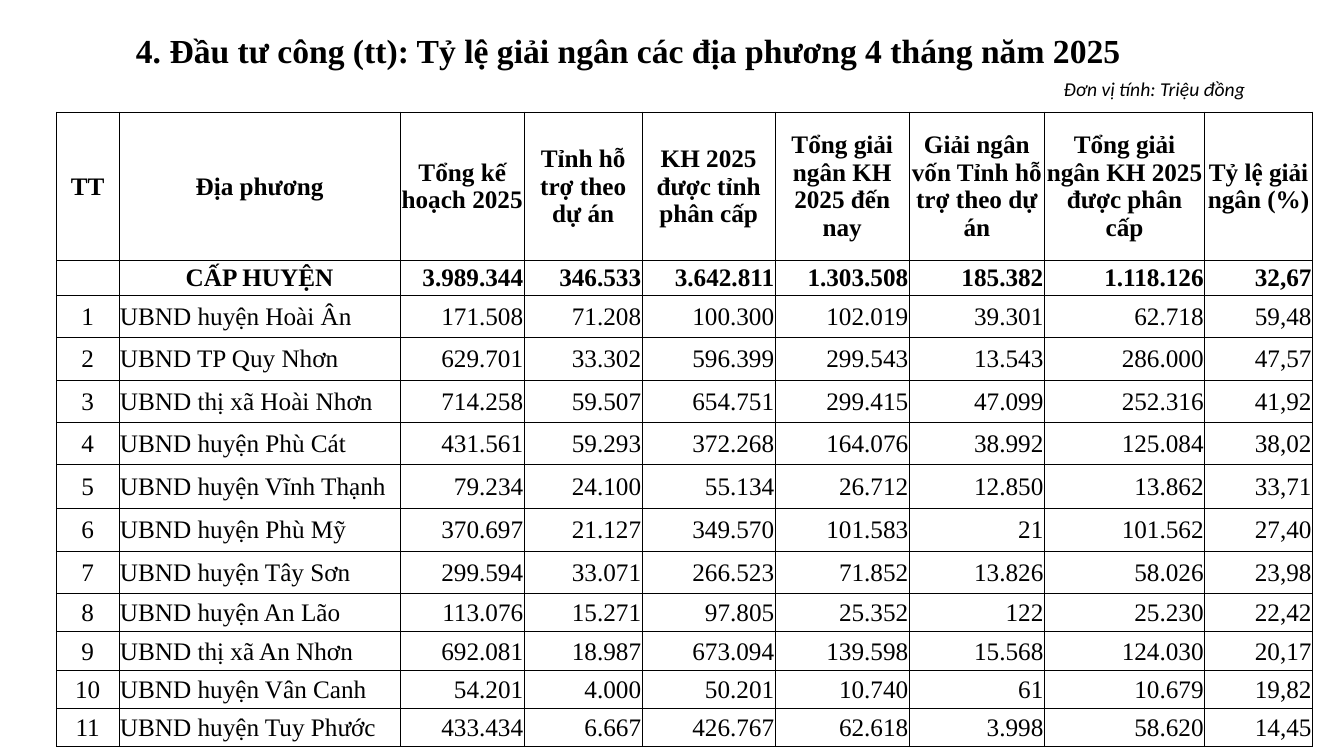
import dataclasses
import typing

import lxml.etree
import pptx
import pptx.dml.color
import pptx.enum.text
import pptx.oxml.ns
import pptx.table
import pptx.text.text
import pptx.util

Inches = pptx.util.Inches
Align = pptx.enum.text.PP_ALIGN
qn = pptx.oxml.ns.qn


@dataclasses.dataclass(frozen=True)
class Theme:
    ink: str = "000000"
    background: str = "FFFFFF"
    serif: str = "Times New Roman"
    sans: str = "Calibri"
    title_size: int = 24
    table_size: int = 18
    unit_size: int = 14
    spacer_size: int = 8
    border_width: float = 0.5


THEME = Theme()


class Column(typing.NamedTuple):
    heading: str
    width: float
    alignment: typing.Optional[Align] = Align.RIGHT


class District(typing.NamedTuple):
    name: str
    figures: str
    height: float


COLUMNS = [
    Column("TT", 0.62, Align.CENTER),
    Column("Địa phương", 2.79, None),
    Column("Tổng kế hoạch 2025", 1.23),
    Column("Tỉnh hỗ trợ theo dự án", 1.17),
    Column("KH 2025 được tỉnh phân cấp", 1.32),
    Column("Tổng giải ngân KH 2025 đến nay", 1.33),
    Column("Giải ngân vốn Tỉnh hỗ trợ theo dự án", 1.34),
    Column("Tổng giải ngân KH 2025\vđược phân cấp", 1.59),
    Column("Tỷ lệ giải ngân (%)", 1.07),
]
HEADING_HEIGHT = 1.47
TOTAL = District("CẤP HUYỆN", "3.989.344 346.533 3.642.811 1.303.508 185.382 1.118.126 32,67", 0.35)
DISTRICTS = [
    District("UBND huyện Hoài Ân", "171.508 71.208 100.300 102.019 39.301 62.718 59,48", 0.42),
    District("UBND TP Quy Nhơn", "629.701 33.302 596.399 299.543 13.543 286.000 47,57", 0.42),
    District("UBND thị xã Hoài Nhơn", "714.258 59.507 654.751 299.415 47.099 252.316 41,92", 0.42),
    District("UBND huyện Phù Cát", "431.561 59.293 372.268 164.076 38.992 125.084 38,02", 0.42),
    District("UBND huyện Vĩnh Thạnh", "79.234 24.100 55.134 26.712 12.850 13.862 33,71", 0.43),
    District("UBND huyện Phù Mỹ", "370.697 21.127 349.570 101.583 21 101.562 27,40", 0.43),
    District("UBND huyện Tây Sơn", "299.594 33.071 266.523 71.852 13.826 58.026 23,98", 0.42),
    District("UBND huyện An Lão", "113.076 15.271 97.805 25.352 122 25.230 22,42", 0.38),
    District("UBND thị xã An Nhơn", "692.081 18.987 673.094 139.598 15.568 124.030 20,17", 0.38),
    District("UBND huyện Vân Canh", "54.201 4.000 50.201 10.740 61 10.679 19,82", 0.38),
    District("UBND huyện Tuy Phước", "433.434 6.667 426.767 62.618 3.998 58.620 14,45", 0.38),
]


def format_runs(paragraph: pptx.text.text._Paragraph, font_name: str, size: int,
                bold: bool = False, italic: bool = False) -> None:
    for run in paragraph.runs:
        run.font.name = font_name
        run.font.size = pptx.util.Pt(size)
        run.font.bold = bold
        run.font.italic = italic
        run.font.color.rgb = pptx.dml.color.RGBColor.from_string(THEME.ink)


def set_borders(cell: pptx.table._Cell, visible: bool) -> None:
    """Give all four sides one line, or none."""
    properties = cell._tc.get_or_add_tcPr()
    for position, side in enumerate(("a:lnL", "a:lnR", "a:lnT", "a:lnB")):
        line = lxml.etree.Element(qn(side), w=str(pptx.util.Pt(THEME.border_width)))
        properties.insert(position, line)
        if visible:
            fill = lxml.etree.SubElement(line, qn("a:solidFill"))
            lxml.etree.SubElement(fill, qn("a:srgbClr"), val=THEME.ink)
        else:
            lxml.etree.SubElement(line, qn("a:noFill"))


def add_plain_table(slide: pptx.slide.Slide, left: float, top: float, widths: list[float],
                    heights: list[float], bordered: bool) -> pptx.table.Table:
    frame = slide.shapes.add_table(len(heights), len(widths), Inches(left), Inches(top),
                                   Inches(sum(widths)), Inches(sum(heights)))
    table = frame.table
    table.first_row = False
    table.horz_banding = False
    for column, width in zip(table.columns, widths):
        column.width = Inches(width)
    for row, height in zip(table.rows, heights):
        row.height = Inches(height)
    for cell in table.iter_cells():
        cell.fill.background()
        cell.vertical_anchor = pptx.enum.text.MSO_ANCHOR.MIDDLE
        set_borders(cell, bordered)
    return table


def add_title(slide: pptx.slide.Slide) -> None:
    box = slide.shapes.add_textbox(Inches(1.25), Inches(0.25), Inches(11.4), Inches(0.78))
    box.text_frame.word_wrap = True
    box.text_frame.text = "4. Đầu tư công (tt): Tỷ lệ giải ngân các địa phương 4 tháng năm 2025"
    format_runs(box.text_frame.paragraphs[0], THEME.serif, THEME.title_size, bold=True)


def add_disbursement_table(slide: pptx.slide.Slide) -> None:
    contents = [[column.heading for column in COLUMNS], ["", TOTAL.name, *TOTAL.figures.split()]]
    contents += [[str(number), district.name, *district.figures.split()]
                 for number, district in enumerate(DISTRICTS, 1)]
    heights = [HEADING_HEIGHT, TOTAL.height] + [district.height for district in DISTRICTS]
    table = add_plain_table(slide, 0.56, 1.11, [column.width for column in COLUMNS], heights, True)
    for row_index, texts in enumerate(contents):
        for column_index, text in enumerate(texts):
            cell = table.cell(row_index, column_index)
            cell.margin_left = cell.margin_right = cell.margin_top = Inches(0.01)
            cell.margin_bottom = 0
            cell.text_frame.text = text
            paragraph = cell.text_frame.paragraphs[0]
            # Headings and the total's name are centred
            centred = row_index == 0 or (row_index == 1 and column_index == 1)
            paragraph.alignment = Align.CENTER if centred else COLUMNS[column_index].alignment
            format_runs(paragraph, THEME.serif, THEME.table_size, bold=row_index < 2)


def add_unit_table(slide: pptx.slide.Slide) -> None:
    table = add_plain_table(slide, 10.45, 0.72, [2.12], [0.33, 0.23], False)
    unit_cell, spacer_cell = table.iter_cells()
    unit_cell.text_frame.text = "Đơn vị tính: Triệu đồng"
    paragraph = unit_cell.text_frame.paragraphs[0]
    paragraph.alignment = Align.JUSTIFY
    paragraph.space_after = pptx.util.Pt(12)
    format_runs(paragraph, THEME.sans, THEME.unit_size, italic=True)
    # A small type size keeps the empty row low
    lxml.etree.SubElement(spacer_cell.text_frame.paragraphs[0]._p, qn("a:endParaRPr"),
                          sz=str(THEME.spacer_size * 100))


def main() -> None:
    presentation = pptx.Presentation()
    presentation.slide_width = Inches(13.33)
    presentation.slide_height = Inches(7.5)
    slide = presentation.slides.add_slide(presentation.slide_layouts[6])
    slide.background.fill.solid()
    slide.background.fill.fore_color.rgb = pptx.dml.color.RGBColor.from_string(THEME.background)
    add_title(slide)
    add_disbursement_table(slide)
    add_unit_table(slide)
    presentation.save("out.pptx")


if __name__ == "__main__":
    main()
